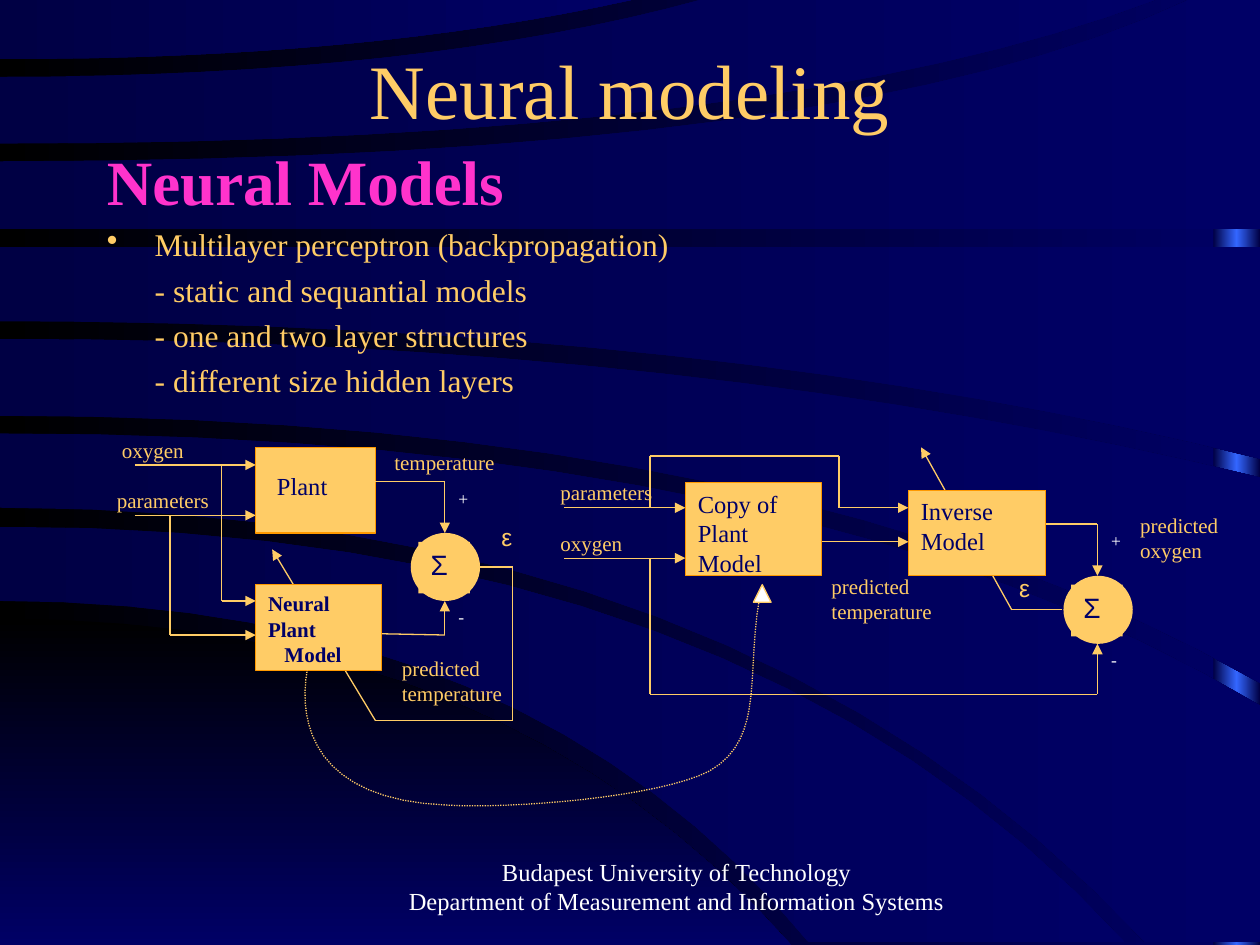
"""Build the neural modeling slide with its two block diagrams."""
from copy import deepcopy
from dataclasses import dataclass
from itertools import pairwise
from typing import NamedTuple

from lxml import etree
from pptx import Presentation
from pptx.dml.color import RGBColor
from pptx.enum import dml, shapes, text
from pptx.oxml.ns import qn
from pptx.util import Inches, Pt

Point = tuple[float, float]


@dataclass(frozen=True)
class Theme:
    """Colours, fonts and type sizes of the slide."""
    gold: str = "FFCC66"
    orange: str = "FF9900"
    navy: str = "000066"
    dusk: str = "000044"
    black: str = "000000"
    blue: str = "3366FF"
    pink: str = "FF33CC"
    white: str = "FFFFFF"
    serif: str = "Times New Roman"
    sans: str = "Arial"
    title: int = 44
    heading: int = 36
    body: int = 18
    sigma: int = 16
    block: int = 14
    label: int = 12
    sign: int = 10
    hairline: float = 0.75


T = Theme()


class Label(NamedTuple):
    words: str
    left: float
    top: float
    width: float = 1.3
    height: float = 0.41
    size: int = T.label
    color: str = T.gold
    font: str = T.serif


class Block(NamedTuple):
    left: float
    top: float
    width: float
    height: float = 0.68
    words: str = ""
    size: int = T.block
    bold: bool = False


class Inlet(NamedTuple):
    words: str
    left: float
    top: float
    lead: float = 0.13


class Sum(NamedTuple):
    x: float
    y: float
    source: float


class Edge(NamedTuple):
    start: float
    bend: float
    right: float
    end: float


class Sheet(NamedTuple):
    upper: Edge
    lower: Edge
    corner: tuple[Point, ...] = ()


HILL = Sheet(Edge(4.91, 4, 6.28, 7.5), Edge(7.5, 3, 6.28, 7.5))
SHEETS = [
    Sheet(Edge(4.18, 5.9, 8.93, 7.48), Edge(4.77, 4.2, 6.42, 7.48)),
    Sheet(Edge(3.44, 6.4, 10, 5.6), Edge(4.03, 5.88, 9.09, 7.48), ((10, 7.48),)),
    Sheet(Edge(2.69, 5.5, 10, 3.79), Edge(3.3, 6.3, 10, 5.42)),
    Sheet(Edge(1.96, 5, 10, 1.96), Edge(2.55, 5.66, 10, 3.64)),
    Sheet(Edge(1.28, 6.73, 9.43, 0), Edge(1.82, 5, 10, 1.82), ((10, 0),)),
    Sheet(Edge(0.61, 3.34, 5.56, 0), Edge(1.14, 6.15, 9.17, 0)),
    Sheet(Edge(0, 2.5, 5.01, 0), Edge(0.47, 2.9, 5.01, 0)),
]
INLETS = [Inlet("oxygen", 1.07, 3.69, 0.2), Inlet("parameters", 1.07, 4.09, 0.24),
          Inlet("parameters", 4.48, 4.03), Inlet("oxygen", 4.48, 4.43)]
SUMS = [Sum(3.53, 4.5, 2.98), Sum(8.71, 4.84, 8.3)]
WIRES: list[list[Point]] = [
    [(3.8, 4.5), (4.07, 4.5), (4.07, 5.72), (2.98, 5.72), (2.16, 4.36)],
    [(1.76, 3.69), (1.76, 4.77), (2.03, 4.77)],
    [(1.35, 4.09), (1.35, 5.04), (2.03, 5.04)],
    [(3.03, 5.03), (3.53, 5.04), (3.53, 4.77)],
    [(8.43, 4.84), (8.03, 4.84), (7.31, 3.55)],
    [(6.39, 4.3), (7.21, 4.3)],
    [(5.16, 4.03), (5.16, 3.62), (6.66, 3.62), (6.66, 4.03), (7.21, 4.03)],
    [(5.16, 4.43), (5.16, 5.51), (8.71, 5.51), (8.71, 5.11)],
]
BLOCKS = [
    Block(2.03, 3.55, 0.95),
    Block(2.03, 4.64, 1, words="Neural\nPlant\nModel", size=T.label, bold=True),
    Block(7.21, 3.89, 1.09),
    Block(5.44, 3.83, 1.08, 0.74, "Copy of\vPlant Model"),
]
LABELS = [
    Label("Plant", 2.1, 3.69, size=T.block, color=T.navy),
    Label("Inverse\vModel", 7.21, 3.89, size=T.block, color=T.navy),
    Label(" temperature", 2.99, 3.52),
    Label(" predicted\v temperature", 3.05, 5.15),
    Label(" predicted\v temperature", 6.46, 4.5),
    Label(" predicted\v oxygen", 8.91, 4.02, 1.09),
    Label("ε", 3.88, 4.09, 0.41, size=T.block, font=T.sans),
    Label("ε", 7.99, 4.5, 0.41, size=T.block, font=T.sans),
]
TRANSFER: list[Point] = [
    (2.44, 5.31), (2.36, 5.75), (2.5, 6.35), (3.55, 6.39), (4.06, 6.42), (5.22, 6.33),
    (5.63, 6.12), (6.1, 5.85), (5.9, 5.3), (6.05, 4.64)]


def write(frame, words: str, size: int, color: str, font: str = T.serif, bold: bool = False) -> None:
    """Fill a text frame and format its runs and line breaks."""
    frame.text, frame.word_wrap = words, True
    for line in frame.paragraphs:
        style(line, size, color, font, bold)


def style(line, size: int, color: str, font: str = T.serif, bold: bool = False) -> None:
    """Format every run and line break of a paragraph."""
    for run in line.runs:
        run.font.size, run.font.name, run.font.bold = Pt(size), font, bold
        run.font.color.rgb = RGBColor.from_string(color)
    for gap in line._p.findall(qn("a:br")):
        gap.append(deepcopy(line.runs[0]._r.rPr))


def indent(line, left: float, first: float = 0) -> None:
    """Set the left and first-line indents of a paragraph."""
    props = line._p.get_or_add_pPr()
    props.set("marL", str(Inches(left)))
    props.set("indent", str(Inches(first)))


def grade(fill, colors: list[str], angle: float = 0) -> None:
    """Apply an evenly spaced linear gradient."""
    fill.gradient()
    fill.gradient_angle = angle
    first = fill.gradient_stops[0]._gs
    for _ in colors[2:]:
        first.addnext(deepcopy(first))
    for i, (stop, color) in enumerate(zip(fill.gradient_stops, colors)):
        stop.color.rgb, stop.position = RGBColor.from_string(color), i / (len(colors) - 1)


def stroke(line, color: str) -> None:
    """Give a line its colour and the common width."""
    line.color.rgb, line.width = RGBColor.from_string(color), Pt(T.hairline)


def outline(slide, points: list[Point], close: bool = True):
    """Draw a freeform through points given in inches."""
    start, *rest = [(Inches(x), Inches(y)) for x, y in points]
    builder = slide.shapes.build_freeform(*start, scale=1.0)
    builder.add_line_segments(rest, close=close)
    form = builder.convert_to_shape()
    form.shadow.inherit = False
    return form


def solid(slide, kind, box: tuple[float, ...], color: str, edge: str | None = None):
    """Draw a flat preset shape with an optional edge."""
    shape = slide.shapes.add_shape(kind, *map(Inches, box))
    shape.shadow.inherit = False
    shape.fill.solid()
    shape.fill.fore_color.rgb = RGBColor.from_string(color)
    if edge:
        stroke(shape.line, edge)
    else:
        shape.line.fill.background()
    shape.text_frame.vertical_anchor = text.MSO_ANCHOR.TOP
    shape.text_frame.paragraphs[0].alignment = text.PP_ALIGN.LEFT
    return shape


def draw_wire(slide, points: list[Point]) -> None:
    """Draw a chain of straight connectors with an arrow at its end."""
    for begin, end in pairwise(points):
        link = slide.shapes.add_connector(shapes.MSO_CONNECTOR.STRAIGHT, *map(Inches, begin + end))
        stroke(link.line, T.gold)
        if end == points[-1]:
            etree.SubElement(link.line._get_or_add_ln(), qn("a:tailEnd"), type="triangle")
        etree.SubElement(link._element.spPr, qn("a:effectLst"))


def draw_inlet(slide, inlet: Inlet) -> None:
    """Draw a named input arrow."""
    draw_wire(slide, [(inlet.left, inlet.top), (inlet.left + 0.96, inlet.top)])
    draw_label(slide, Label(inlet.words, inlet.left - inlet.lead, inlet.top - 0.27))


def draw_block(slide, block: Block) -> None:
    """Draw a model block with its caption."""
    shape = solid(slide, shapes.MSO_SHAPE.RECTANGLE, block[:4], T.gold, T.orange)
    if block.words:
        write(shape.text_frame, block.words, block.size, T.navy, bold=block.bold)
        for line in shape.text_frame.paragraphs:
            line.alignment = text.PP_ALIGN.LEFT
        if block.bold:
            indent(line, 0.13)


def draw_sum(slide, node: Sum) -> None:
    """Draw a summing node with its positive input and its signs."""
    x, y, source = node
    draw_wire(slide, [(source, y - 0.68), (x, y - 0.68), (x, y - 0.27)])
    solid(slide, shapes.MSO_SHAPE.OVAL, (x - 0.27, y - 0.27, 0.55, 0.54), T.gold)
    core = solid(slide, shapes.MSO_SHAPE.RECTANGLE, (x - 0.21, y - 0.2, 0.41, 0.41), T.gold)
    write(core.text_frame, "Σ", T.sigma, T.navy, T.sans)
    for sign, shift in [("+", -0.68), ("-", 0.26)]:
        draw_label(slide, Label(sign, x + 0.01, y + shift, 0.41, size=T.sign, color=T.white))


def draw_label(slide, label: Label):
    """Place a piece of free text."""
    box = slide.shapes.add_textbox(*map(Inches, label[1:5]))
    write(box.text_frame, label.words, label.size, label.color, label.font)
    return box.text_frame


def bezier(controls: list[Point], steps: int = 16) -> list[Point]:
    """Sample a curve of any degree by repeated interpolation."""
    samples = []
    for t in (i / steps for i in range(steps + 1)):
        level = controls
        while len(level) > 1:
            level = [(a + (c - a) * t, b + (d - b) * t) for (a, b), (c, d) in pairwise(level)]
        samples += level
    return samples


def sweep(edge: Edge) -> list[Point]:
    """Trace a sheet edge that leaves the left side level."""
    return bezier([(0, edge.start), (edge.bend, edge.start), (edge.right, edge.end)])


def draw_backdrop(slide) -> None:
    """Paint the gradient background, its edge strip and its sheets."""
    grade(slide.background.fill, [T.black, T.navy])
    strip = solid(slide, shapes.MSO_SHAPE.RECTANGLE, (9.63, 0, 0.37, 7.5), T.dusk)
    grade(strip.fill, [T.dusk, T.blue, T.dusk])
    for sheet in [HILL, *SHEETS]:
        form = outline(slide, [*sweep(sheet.upper), *sheet.corner, *reversed(sweep(sheet.lower))])
        form.line.fill.background()
        shade, angle = (T.black, 270) if sheet is HILL else (T.dusk, 0)
        grade(form.fill, [shade, T.navy], angle)


def draw_words(slide) -> None:
    """Write the title, the outline text and the affiliation."""
    title = slide.shapes.title
    title._element.getparent().append(title._element)
    title.left, title.top, title.width, title.height = map(Inches, (0.75, 0.33, 8.5, 0.75))
    write(title.text_frame, "Neural modeling", T.title, T.gold)
    title.text_frame.auto_size = text.MSO_AUTO_SIZE.NONE
    title.text_frame.vertical_anchor = text.MSO_ANCHOR.MIDDLE
    models = draw_label(slide, Label(
        "Neural Models\nMultilayer perceptron (backpropagation)\n- static and sequantial models\n"
        "- one and two layer structures\n- different size hidden layers", 0.75, 1.08, 8.5, 2.33, T.body))
    heading, bullet, *details = models.paragraphs
    for line in models.paragraphs:
        line.space_before = Pt(4.3)
    style(heading, T.heading, T.pink, bold=True)
    indent(bullet, 0.38, -0.38)
    etree.SubElement(bullet._p.pPr, qn("a:buChar"), char="•")
    for line in details:
        indent(line, 0.38)
    footer = draw_label(slide, Label(
        "Budapest University of Technology\nDepartment of Measurement and Information Systems",
        2.83, 6.75, 5.08, 0.5, T.block, T.white))
    for line in footer.paragraphs:
        line.alignment = text.PP_ALIGN.CENTER


def main() -> None:
    """Assemble and save the slide."""
    deck = Presentation()
    deck.slide_width, deck.slide_height = Inches(10), Inches(7.5)
    slide = deck.slides.add_slide(deck.slide_layouts[5])
    draw_backdrop(slide)
    draw_words(slide)
    for draw, items in [(draw_wire, WIRES), (draw_inlet, INLETS), (draw_block, BLOCKS),
                        (draw_sum, SUMS), (draw_label, LABELS)]:
        for item in items:
            draw(slide, item)
    curves = [bezier(TRANSFER[i:i + 4]) for i in range(0, len(TRANSFER) - 1, 3)]
    transfer = outline(slide, sum(curves, []), close=False)
    transfer.fill.background()
    stroke(transfer.line, T.gold)
    transfer.line.dash_style = dml.MSO_LINE.ROUND_DOT
    solid(slide, shapes.MSO_SHAPE.ISOSCELES_TRIANGLE, (5.98, 4.64, 0.14, 0.14), T.white, T.gold)
    deck.save("out.pptx")


if __name__ == "__main__":
    main()
